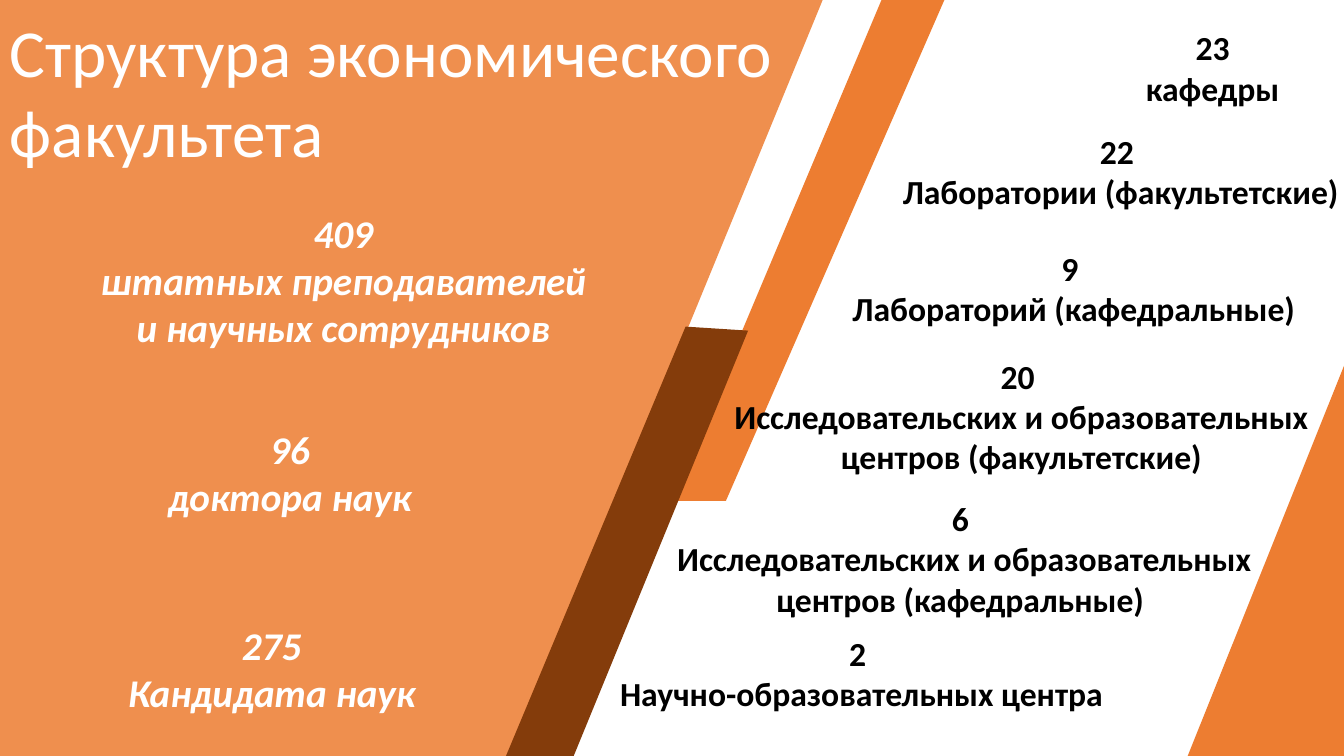
import pptx
import pptx.dml.color
import pptx.enum.shapes
import pptx.enum.text
import pptx.oxml
import pptx.oxml.ns
import pptx.util
from dataclasses import dataclass

Inches = pptx.util.Inches


@dataclass(frozen=True)
class Theme:
    font: str = "Calibri"
    orange: str = "ED7D31"
    brown: str = "843C0B"
    white: str = "FFFFFF"
    black: str = "000000"
    title_size: int = 48
    staff_size: int = 28
    unit_size: int = 24


class FacultySlide:
    def __init__(self, presentation, theme):
        self.theme = theme
        self.slide = presentation.slides.add_slide(presentation.slide_layouts[6])

    def paint(self, shape, color, opacity=None):
        shape.shadow.inherit = False
        shape.fill.solid()
        shape.fill.fore_color.rgb = pptx.dml.color.RGBColor.from_string(color)
        shape.line.fill.background()
        if opacity is not None:
            color_element = shape._element.spPr.find(".//" + pptx.oxml.ns.qn("a:srgbClr"))
            namespace = pptx.oxml.ns.nsdecls("a")
            color_element.append(
                pptx.oxml.parse_xml(f'<a:alpha {namespace} val="{opacity * 1000}"/>')
            )

    def polygon(self, points, color, opacity=None):
        start, *corners = [(Inches(x), Inches(y)) for x, y in points]
        builder = self.slide.shapes.build_freeform(*start)
        builder.add_line_segments(corners, close=True)
        self.paint(builder.convert_to_shape(), color, opacity)

    def corner(self, left, top, width, height, color):
        shape = self.slide.shapes.add_shape(
            pptx.enum.shapes.MSO_SHAPE.ISOSCELES_TRIANGLE,
            Inches(left), Inches(top), Inches(width), Inches(height),
        )
        shape.adjustments[0] = 1
        self.paint(shape, color)

    def text(self, box, content, size, color, bold=True, italic=False,
             alignment=pptx.enum.text.PP_ALIGN.CENTER, wrap=True):
        shape = self.slide.shapes.add_textbox(*(Inches(length) for length in box))
        text_frame = shape.text_frame
        text_frame.word_wrap = wrap
        text_frame.auto_size = pptx.enum.text.MSO_AUTO_SIZE.SHAPE_TO_FIT_TEXT
        text_frame.text = content
        for paragraph in text_frame.paragraphs:
            paragraph.alignment = alignment
            for run in paragraph.runs:
                run.font.name = self.theme.font
                run.font.size = pptx.util.Pt(size)
                run.font.bold = bold
                run.font.italic = italic
                run.font.color.rgb = pptx.dml.color.RGBColor.from_string(color)

    def title(self, box, content):
        self.text(box, content, self.theme.title_size, self.theme.white, bold=False,
                  alignment=pptx.enum.text.PP_ALIGN.LEFT, wrap=False)

    def unit(self, box, content):
        self.text(box, content, self.theme.unit_size, self.theme.black)

    def staff(self, box, content):
        self.text(box, content, self.theme.staff_size, self.theme.white, italic=True)


UNITS = [
    ((10.65, 0.22, 2.83, 0.91), "23 \nкафедры "),
    ((8.64, 1.25, 4.95, 0.91), "22 \nЛаборатории (факультетские)"),
    ((8.35, 2.41, 4.6, 0.91), "9 \nЛабораторий (кафедральные)"),
    ((6.47, 3.48, 7.32, 1.31),
     "20 \nИсследовательских и образовательных\nцентров (факультетские)"),
    ((6.31, 4.89, 6.43, 1.31),
     "6\n Исследовательских и образовательных центров (кафедральные)"),
    ((5.98, 6.23, 5.13, 0.91), "2 \nНаучно-образовательных центра"),
]

STAFF = [
    ((-0.37, 2.03, 7.55, 1.51),
     " 409 \nштатных преподавателей\n и научных сотрудников "),
    ((-0.9, 4.17, 7.55, 1.04), " 96 \nдоктора наук"),
    ((-1.08, 6.11, 7.55, 1.04), " 275 \nКандидата наук"),
]


def main():
    presentation = pptx.Presentation()
    presentation.slide_width = Inches(13.33)
    presentation.slide_height = Inches(7.5)
    theme = Theme()
    faculty = FacultySlide(presentation, theme)

    faculty.polygon([(8.76, -0.04), (9.38, -0.03), (7.2, 4.97), (6.65, 4.97)], theme.orange)
    faculty.polygon(
        [(-0.04, -0.05), (8.18, -0.05), (5.03, 7.62), (4.98, 7.56), (-0.04, 7.56)],
        theme.orange, opacity=86,
    )
    faculty.title((0, 0.05, 7.85, 1.72), "Структура экономического\nфакультета")
    for box, content in UNITS:
        faculty.unit(box, content)
    for box, content in STAFF:
        faculty.staff(box, content)
    faculty.polygon([(6.8, 3.24), (7.42, 3.28), (5.69, 7.5), (5.01, 7.52)], theme.brown)
    faculty.corner(11.78, 3.58, 1.57, 3.92, theme.orange)

    presentation.save("out.pptx")


if __name__ == "__main__":
    main()
